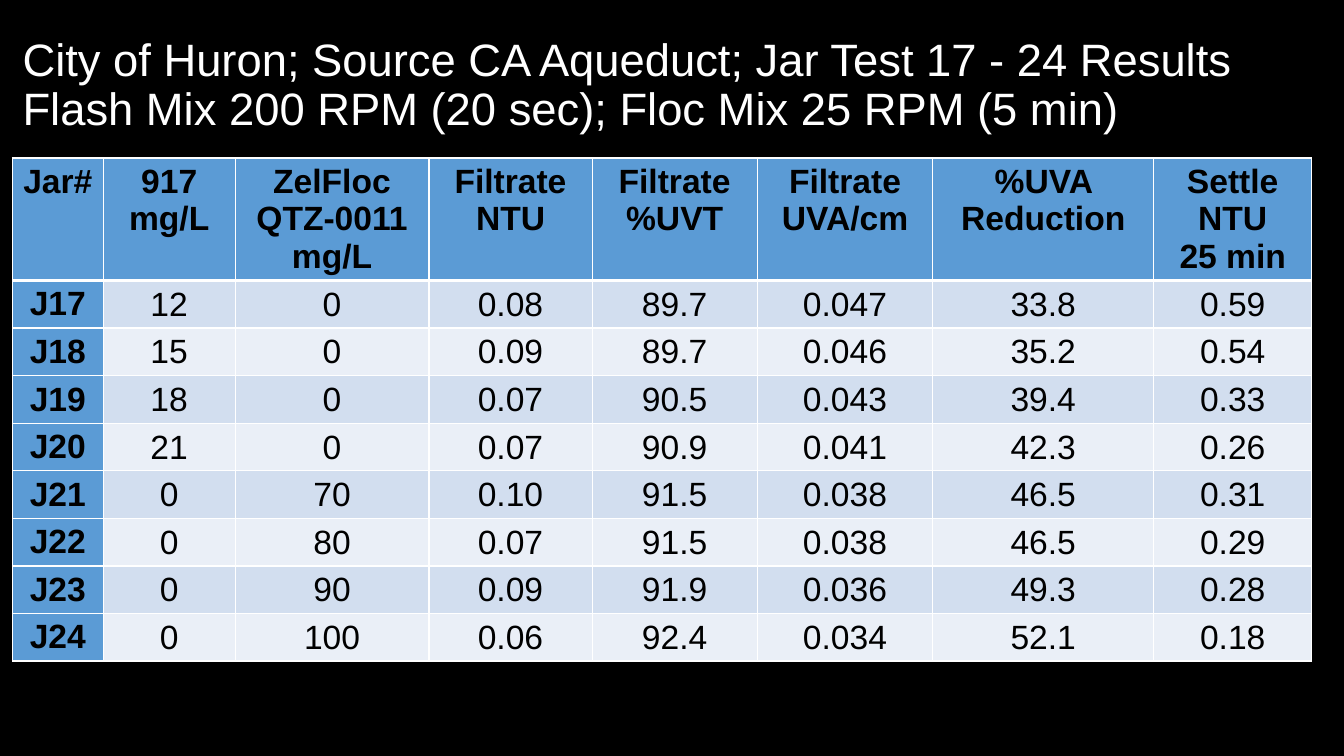
from dataclasses import dataclass

from lxml import etree
from pptx import Presentation
from pptx.dml.color import RGBColor
from pptx.enum.text import MSO_ANCHOR, PP_ALIGN
from pptx.oxml.ns import qn
from pptx.util import Pt

TITLE = ("City of Huron; Source CA Aqueduct; Jar Test 17 - 24 Results\v"
         "Flash Mix 200 RPM (20 sec); Floc Mix 25 RPM (5 min)")
HEADERS = ["Jar#", "917\nmg/L", "ZelFloc\nQTZ-0011\nmg/L", "Filtrate\nNTU",
           "Filtrate\n%UVT", "Filtrate\nUVA/cm", "%UVA Reduction",
           "Settle\nNTU\n25 min"]
RESULTS = [
    ("J17", "12", "0", "0.08", "89.7", "0.047", "33.8", "0.59"),
    ("J18", "15", "0", "0.09", "89.7", "0.046", "35.2", "0.54"),
    ("J19", "18", "0", "0.07", "90.5", "0.043", "39.4", "0.33"),
    ("J20", "21", "0", "0.07", "90.9", "0.041", "42.3", "0.26"),
    ("J21", "0", "70", "0.10", "91.5", "0.038", "46.5", "0.31"),
    ("J22", "0", "80", "0.07", "91.5", "0.038", "46.5", "0.29"),
    ("J23", "0", "90", "0.09", "91.9", "0.036", "49.3", "0.28"),
    ("J24", "0", "100", "0.06", "92.4", "0.034", "52.1", "0.18"),
]
COLUMN_WIDTHS = [64.8, 94.3, 138.4, 116.6, 117.9, 125.5, 157.7, 113]
HEADER_HEIGHT, ROW_HEIGHT = 87.5, 34
TABLE_LEFT, TABLE_TOP = 8.9, 112.8


@dataclass(frozen=True)
class Theme:
    font: str = "Arial"
    title_size: float = 32.4
    table_size: float = 24
    background: str = "000000"
    title: str = "FFFFFF"
    text: str = "000000"
    border: str = "FFFFFF"
    heading: str = "5B9BD5"
    bands: tuple = ("D2DEEF", "EAEFF7")


THEME = Theme()


def set_font(paragraph, size, color, bold=False):
    font = paragraph.font
    font.name, font.size, font.bold = THEME.font, Pt(size), bold
    font.color.rgb = RGBColor.from_string(color)


def set_borders(cell, **widths):
    """Draw cell edges; widths maps L, R, T and B to points, in that order."""
    properties = cell._tc.get_or_add_tcPr()
    for position, (side, width) in enumerate(widths.items()):
        line = etree.Element(qn(f"a:ln{side}"), w=str(Pt(width)))
        fill = etree.SubElement(line, qn("a:solidFill"))
        etree.SubElement(fill, qn("a:srgbClr"), val=THEME.border)
        properties.insert(position, line)


def format_cell(cell, value, row, column):
    is_heading = row == 0 or column == 0
    cell.text = value
    for paragraph in cell.text_frame.paragraphs:
        paragraph.alignment = PP_ALIGN.CENTER
        set_font(paragraph, THEME.table_size, THEME.text, is_heading)
    if not is_heading:
        cell.vertical_anchor = MSO_ANCHOR.MIDDLE
        cell.margin_left = cell.margin_right = cell.margin_top = Pt(0.7)
        cell.margin_bottom = 0
    color = THEME.heading if is_heading else THEME.bands[(row - 1) % 2]
    cell.fill.solid()
    cell.fill.fore_color.rgb = RGBColor.from_string(color)
    set_borders(cell, L=1, R=1, T=3 if row == 1 else 1, B=3 if row == 0 else 1)


def add_title(slide):
    title = slide.shapes.title
    title.left, title.top, title.width, title.height = map(Pt, (8.9, 9.4, 938, 104.4))
    frame = title.text_frame
    frame.text = TITLE
    frame.word_wrap = True
    frame.vertical_anchor = MSO_ANCHOR.MIDDLE
    paragraph = frame.paragraphs[0]
    paragraph.alignment = PP_ALIGN.LEFT
    paragraph.line_spacing = 0.9
    set_font(paragraph, THEME.title_size, THEME.title)


def add_results_table(slide):
    rows = [HEADERS, *RESULTS]
    height = HEADER_HEIGHT + ROW_HEIGHT * len(RESULTS)
    table = slide.shapes.add_table(
        len(rows), len(HEADERS), Pt(TABLE_LEFT), Pt(TABLE_TOP),
        Pt(sum(COLUMN_WIDTHS)), Pt(height)).table
    table.first_col = True
    for column, width in zip(table.columns, COLUMN_WIDTHS):
        column.width = Pt(width)
    for row, values in enumerate(rows):
        table.rows[row].height = Pt(ROW_HEIGHT if row else HEADER_HEIGHT)
        for column, value in enumerate(values):
            format_cell(table.cell(row, column), value, row, column)


def main():
    presentation = Presentation()
    presentation.slide_width, presentation.slide_height = Pt(960), Pt(540)
    slide = presentation.slides.add_slide(presentation.slide_layouts[5])
    slide.background.fill.solid()
    slide.background.fill.fore_color.rgb = RGBColor.from_string(THEME.background)
    add_title(slide)
    add_results_table(slide)
    presentation.save("out.pptx")


if __name__ == "__main__":
    main()
